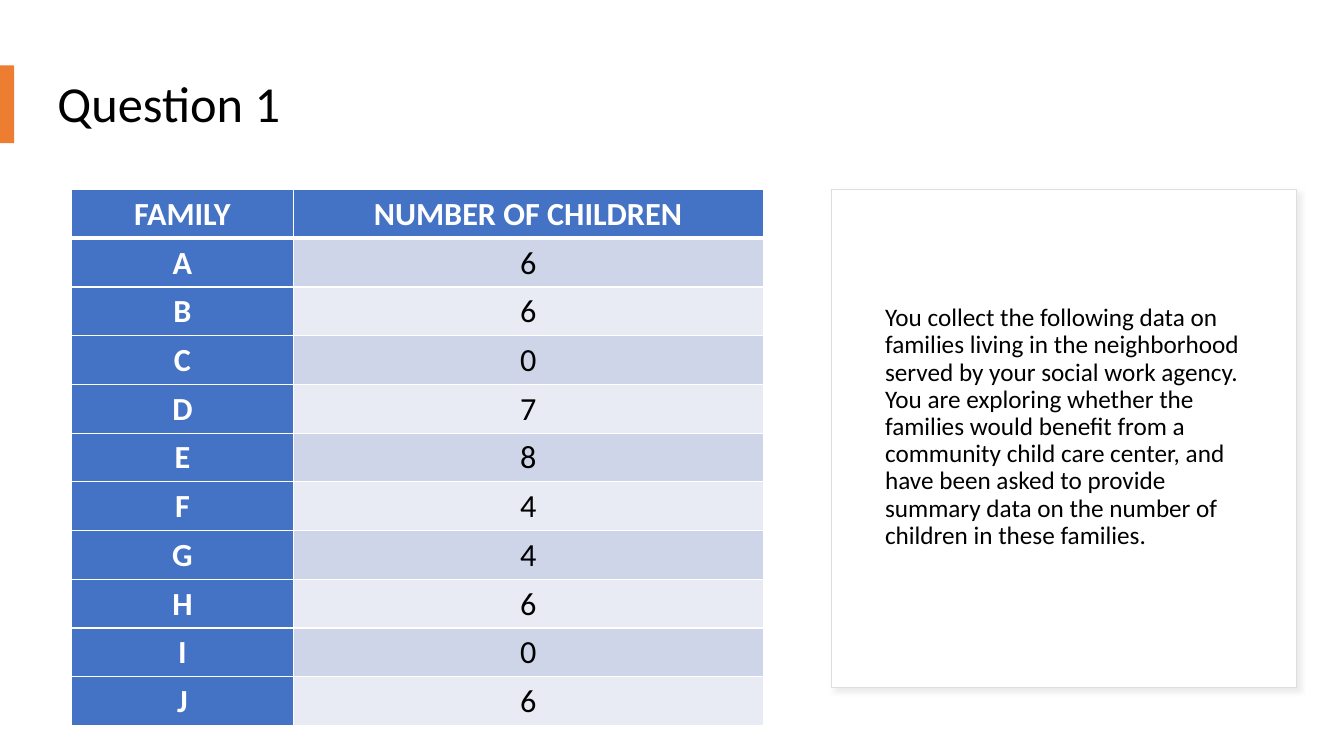
from lxml.etree import SubElement
from pptx import Presentation
from pptx.dml.color import RGBColor
from pptx.enum.shapes import MSO_SHAPE
from pptx.enum.text import MSO_ANCHOR, PP_ALIGN
from pptx.oxml.ns import qn
from pptx.util import Inches, Pt

# Content
TITLE = "Question 1"
HEADINGS = ("FAMILY", "NUMBER OF CHILDREN")
CHILDREN = {"A": 6, "B": 6, "C": 0, "D": 7, "E": 8,
            "F": 4, "G": 4, "H": 6, "I": 0, "J": 6}
SCENARIO = (
    "You collect the following data on families living in the neighborhood "
    "served by your social work agency. You are exploring whether the families "
    "would benefit from a community child care center, and have been asked to "
    "provide summary data on the number of children in these families."
)

# Look
FONT = "Calibri"
BLACK, WHITE, BLUE, ORANGE = "000000", "FFFFFF", "4472C4", "ED7D31"
BANDS = ("CFD5E9", "E8EBF4")
COLUMN_WIDTHS = (2.2, 4.66)
ROW_HEIGHT = 0.45
THIN, THICK = 0.96, 3


def color(hex_code):
    return RGBColor.from_string(hex_code)


def write(frame, text, size, ink=BLACK, bold=False, align=PP_ALIGN.LEFT, spacing=1.0):
    frame.word_wrap = True
    paragraph = frame.paragraphs[0]
    paragraph.alignment = align
    paragraph.line_spacing = spacing
    paragraph.space_before = Pt(0)
    run = paragraph.add_run()
    run.text = text
    run.font.name = FONT
    run.font.size = Pt(size)
    run.font.bold = bold
    run.font.color.rgb = color(ink)


def add_rectangle(left, top, width, height, fill, outline=None):
    rectangle = slide.shapes.add_shape(
        MSO_SHAPE.RECTANGLE, Inches(left), Inches(top), Inches(width), Inches(height))
    rectangle.shadow.inherit = False
    rectangle.fill.solid()
    rectangle.fill.fore_color.rgb = color(fill)
    if outline:
        rectangle.line.color.rgb = color(outline)
        rectangle.line.width = Pt(0.75)
    else:
        rectangle.line.fill.background()
    return rectangle


def add_soft_shadow(card):
    effects = card._element.spPr.find(qn("a:effectLst"))
    shadow = SubElement(effects, qn("a:outerShdw"), blurRad=str(Pt(4)),
                        dist=str(Pt(3)), dir=str(45 * 60000), algn="tl", rotWithShape="0")
    tint = SubElement(shadow, qn("a:srgbClr"), val="D9D9D9")
    SubElement(tint, qn("a:alpha"), val="50000")


def set_borders(cell, top, bottom):
    properties = cell._tc.get_or_add_tcPr()
    for side, width in (("L", THIN), ("R", THIN), ("T", top), ("B", bottom)):
        border = SubElement(properties, qn(f"a:ln{side}"), w=str(Pt(width)))
        fill = SubElement(border, qn("a:solidFill"))
        SubElement(fill, qn("a:srgbClr"), val=WHITE)


presentation = Presentation()
presentation.slide_width, presentation.slide_height = Inches(13.33), Inches(7.5)
slide = presentation.slides.add_slide(presentation.slide_layouts[5])

# Title with its accent bar
title = slide.shapes.title
title.left, title.top, title.width, title.height = map(Inches, (0.47, 0.45, 12.25, 1.21))
title.text_frame.vertical_anchor = MSO_ANCHOR.MIDDLE
write(title.text_frame, TITLE, 36, spacing=0.9)
add_rectangle(0, 0.65, 0.14, 0.77, ORANGE)

# Scenario card
add_soft_shadow(add_rectangle(8.25, 1.88, 4.61, 4.94, WHITE, outline="DEDEDE"))
scenario = slide.shapes.add_textbox(Inches(8.68), Inches(2.21), Inches(3.78), Inches(4.06))
scenario.text_frame.vertical_anchor = MSO_ANCHOR.MIDDLE
write(scenario.text_frame, SCENARIO, 18, spacing=0.9)

# Family table
rows = [HEADINGS, *CHILDREN.items()]
families = slide.shapes.add_table(
    len(rows), len(HEADINGS), Inches(0.71), Inches(1.88),
    Inches(sum(COLUMN_WIDTHS)), Inches(ROW_HEIGHT * len(rows))).table
families.first_col = True
for column, width in zip(families.columns, COLUMN_WIDTHS):
    column.width = Inches(width)
for r, values in enumerate(rows):
    families.rows[r].height = Inches(ROW_HEIGHT)
    for c, value in enumerate(values):
        cell = families.cell(r, c)
        is_heading = r == 0 or c == 0
        set_borders(cell, top=THICK if r == 1 else THIN, bottom=THICK if r == 0 else THIN)
        cell.fill.solid()
        cell.fill.fore_color.rgb = color(BLUE if is_heading else BANDS[(r - 1) % 2])
        write(cell.text_frame, str(value), 23, ink=WHITE if is_heading else BLACK,
              bold=is_heading, align=PP_ALIGN.CENTER)

presentation.save("out.pptx")
